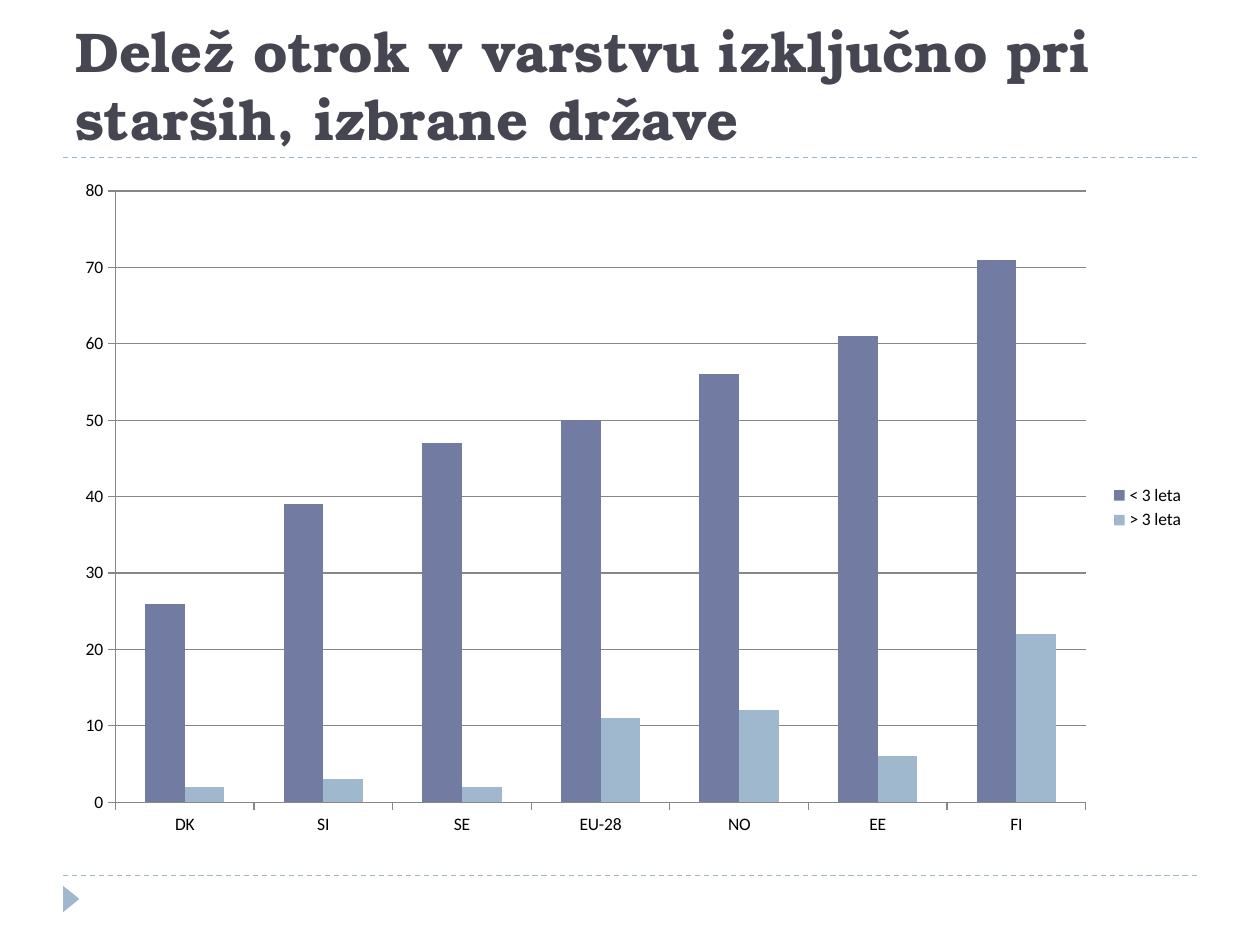
from lxml.etree import SubElement
from pptx import Presentation
from pptx.chart.data import CategoryChartData
from pptx.dml.color import RGBColor
from pptx.enum.chart import XL_CHART_TYPE, XL_LEGEND_POSITION, XL_TICK_MARK
from pptx.enum.dml import MSO_LINE
from pptx.enum.shapes import MSO_CONNECTOR, MSO_SHAPE
from pptx.enum.text import MSO_ANCHOR
from pptx.oxml.ns import qn
from pptx.util import Pt

# Content
TITLE = "Delež otrok v varstvu izključno pri starših, izbrane države"
COUNTRIES = ["DK", "SI", "SE", "EU-28", "NO", "EE", "FI"]
SERIES = [
    ("< 3 leta", [26, 39, 47, 50, 56, 61, 71], "727CA3"),
    ("> 3 leta", [2, 3, 2, 11, 12, 6, 22], "9FB8CD"),
]

# Layout and colours
LEFT, WIDTH = 36, 648
RULE_HEIGHTS = [500.4, 90]
ACCENT, TITLE_COLOR, AXIS_COLOR = "9FB8CD", "464653", "878787"


def color(value):
    return RGBColor.from_string(value)


def add_rule(page, y):
    rule = page.shapes.add_connector(
        MSO_CONNECTOR.STRAIGHT, Pt(LEFT), Pt(y), Pt(LEFT + WIDTH), Pt(y))
    rule.line.color.rgb = color(ACCENT)
    rule.line.width = Pt(0.75)
    rule.line.dash_style = MSO_LINE.DASH
    SubElement(rule.element.spPr, qn("a:effectLst"))


def add_marker(page):
    marker = page.shapes.add_shape(
        MSO_SHAPE.ISOSCELES_TRIANGLE, Pt(33.12), Pt(509.04), Pt(15.12), Pt(9.36))
    marker.rotation = 90
    marker.shadow.inherit = False
    marker.fill.solid()
    marker.fill.fore_color.rgb = color(ACCENT)
    marker.line.fill.background()


def add_title(page):
    box = page.shapes.add_textbox(Pt(LEFT), Pt(12.24), Pt(WIDTH), Pt(77.76))
    frame = box.text_frame
    frame.word_wrap = True
    frame.vertical_anchor = MSO_ANCHOR.BOTTOM
    frame.text = TITLE
    font = frame.paragraphs[0].runs[0].font
    font.name, font.size, font.bold = "TeX Gyre Bonum", Pt(32), True
    font.color.rgb = color(TITLE_COLOR)


def add_column_chart(page):
    data = CategoryChartData()
    data.categories = COUNTRIES
    for name, values, _ in SERIES:
        data.add_series(name, values)
    chart = page.shapes.add_chart(
        XL_CHART_TYPE.COLUMN_CLUSTERED,
        Pt(LEFT), Pt(95.76), Pt(WIDTH), Pt(388.8), data).chart
    chart.has_title = False
    chart.font.name, chart.font.size = "Calibri", Pt(10)
    chart.font.color.rgb = color("000000")

    # Columns
    plot = chart.plots[0]
    plot.gap_width, plot.overlap = 150, 0
    plot.vary_by_categories = False
    for series, (_, _, fill) in zip(plot.series, SERIES):
        series.format.fill.solid()
        series.format.fill.fore_color.rgb = color(fill)

    # Axes and legend
    value_axis = chart.value_axis
    value_axis.minimum_scale, value_axis.maximum_scale = 0, 80
    value_axis.major_unit = 10
    value_axis.has_major_gridlines = True
    for axis in (chart.category_axis, value_axis):
        axis.major_tick_mark = XL_TICK_MARK.OUTSIDE
        axis.minor_tick_mark = XL_TICK_MARK.NONE
    for part in (chart.category_axis, value_axis, value_axis.major_gridlines):
        part.format.line.color.rgb = color(AXIS_COLOR)
        part.format.line.width = Pt(0.75)
    chart.has_legend = True
    chart.legend.position = XL_LEGEND_POSITION.RIGHT
    chart.legend.include_in_layout = False


def main():
    deck = Presentation()
    deck.slide_width, deck.slide_height = Pt(720), Pt(540)
    page = deck.slides.add_slide(deck.slide_layouts[6])
    for y in RULE_HEIGHTS:
        add_rule(page, y)
    add_marker(page)
    add_title(page)
    add_column_chart(page)
    deck.save("out.pptx")


if __name__ == "__main__":
    main()
